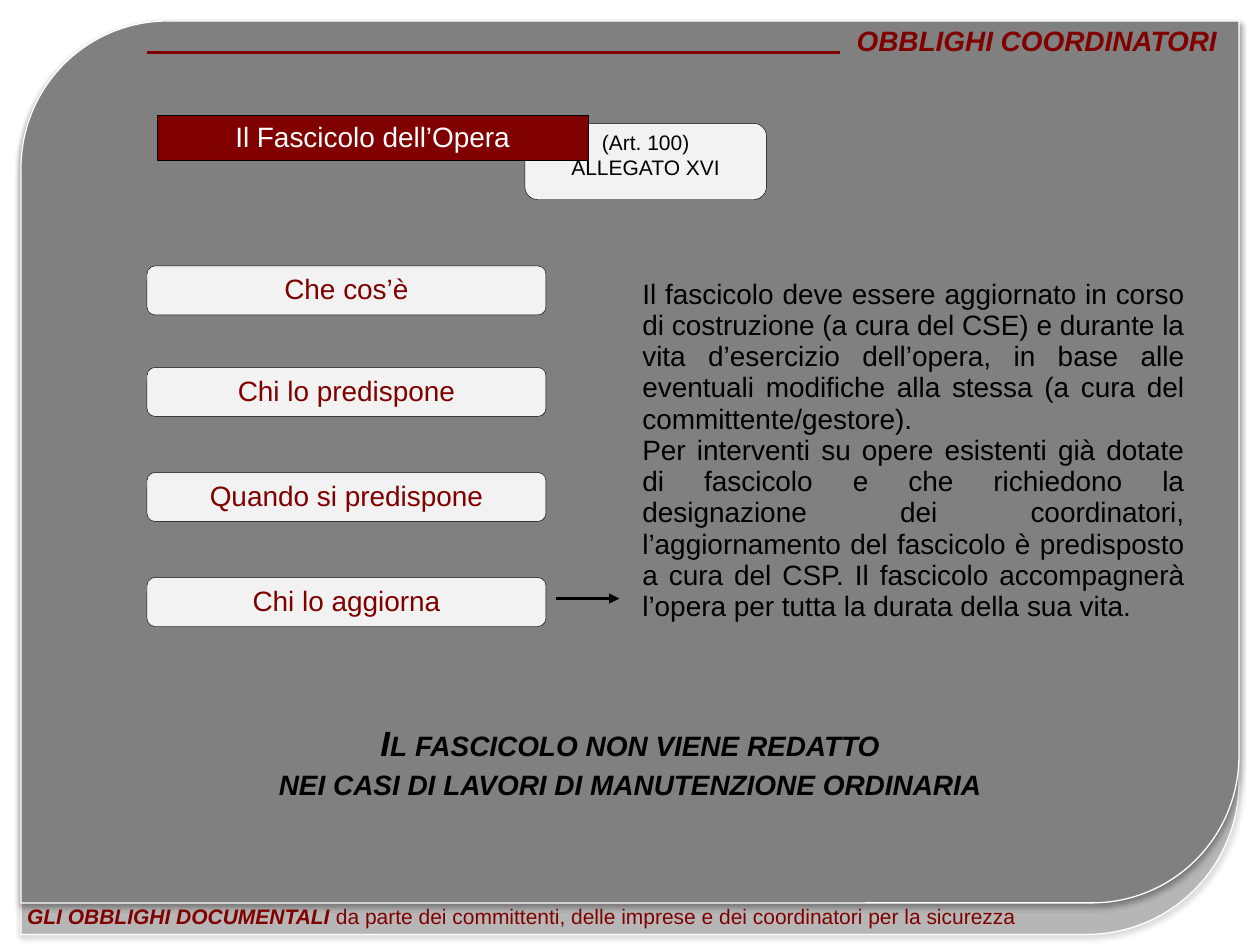
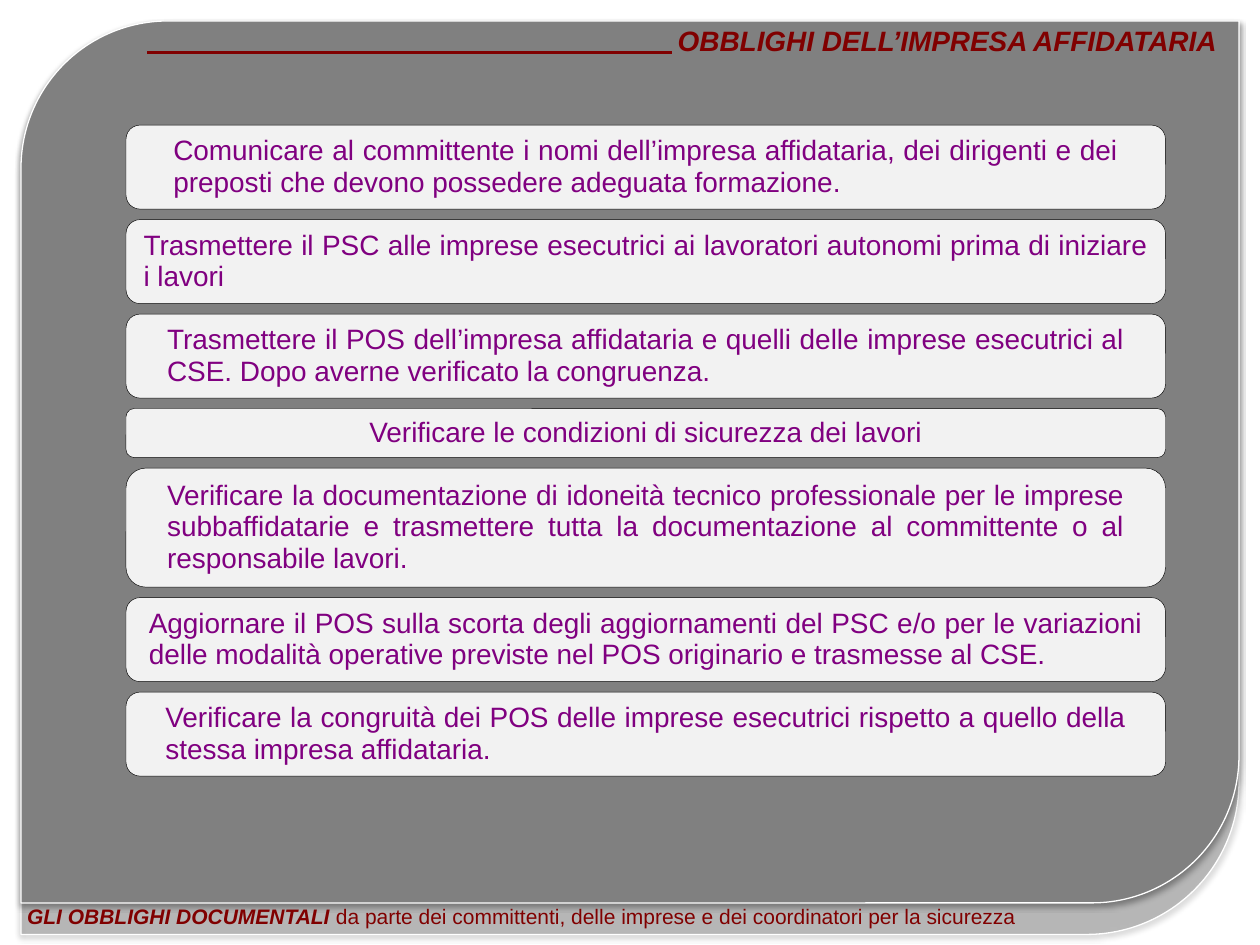
from lxml.etree import SubElement
from pptx import Presentation
from pptx.dml.color import RGBColor
from pptx.enum.shapes import MSO_CONNECTOR as Connector, MSO_SHAPE as Preset
from pptx.enum.text import MSO_ANCHOR as Anchor, MSO_AUTO_SIZE as AutoSize, PP_ALIGN as Align
from pptx.oxml.ns import qn
from pptx.util import Pt

MAROON = RGBColor(0x80, 0x00, 0x00)
PURPLE = RGBColor(0x80, 0x00, 0x80)
GREY = RGBColor(0x80, 0x80, 0x80)
PALE = RGBColor(0xF2, 0xF2, 0xF2)
BLACK = RGBColor(0x00, 0x00, 0x00)
WHITE = RGBColor(0xFF, 0xFF, 0xFF)


def add_box(slide, preset, place, fill, line, line_width):
    shape = slide.shapes.add_shape(preset, *map(Pt, place))
    shape.shadow.inherit = False
    shape.fill.solid()
    shape.fill.fore_color.rgb = fill
    shape.line.color.rgb = line
    shape.line.width = Pt(line_width)
    return shape


def write_text(shape, paragraphs, size, color, alignment, anchor=Anchor.MIDDLE, strong=False, insets=(7.2, 3.6)):
    side, edge = map(Pt, insets)
    frame_format = {"word_wrap": True, "auto_size": AutoSize.NONE, "vertical_anchor": anchor,
                    "margin_left": side, "margin_right": side, "margin_top": edge, "margin_bottom": edge}
    for name, value in frame_format.items():
        setattr(shape.text_frame, name, value)
    shape.text_frame.text = "\n".join(paragraphs)
    font_format = {"name": "Arial", "size": Pt(size), "bold": strong, "italic": strong}
    for paragraph in shape.text_frame.paragraphs:
        paragraph.alignment = alignment
        paragraph.line_spacing = 0.93
        for run in paragraph.runs:
            run.font.color.rgb = color
            for name, value in font_format.items():
                setattr(run.font, name, value)


presentation = Presentation()
presentation.slide_width = Pt(720)
presentation.slide_height = Pt(540)

slides = []
for title_text, title_left, rule_end in [
    ("OBBLIGHI COORDINATORI", 440, 480),
    ("OBBLIGHI DELL’IMPRESA AFFIDATARIA", 362, 384),
]:
    slide = presentation.slides.add_slide(presentation.slide_layouts[5])
    slides.append(slide)

    for height, opacity in [(522, 40), (504, 100)]:
        panel = add_box(slide, Preset.ROUND_2_DIAG_RECTANGLE, (12, 12, 696, height), GREY, WHITE, 0.75)
        properties = panel.element.spPr
        fill_color = properties.find(qn("a:solidFill"))[0]
        SubElement(fill_color, qn("a:alpha"), val=str(opacity * 1000))
        shadow = SubElement(properties.find(qn("a:effectLst")), qn("a:outerShdw"),
                            blurRad=str(Pt(3.1)), dist=str(Pt(1.8)), dir="5400000", rotWithShape="0")
        shadow_color = SubElement(shadow, qn("a:srgbClr"), val=str(BLACK))
        SubElement(shadow_color, qn("a:alpha"), val="35000")

    footer = slide.shapes.add_textbox(Pt(9), Pt(514), Pt(624), Pt(20))
    write_text(footer, ["GLI OBBLIGHI DOCUMENTALI "], 12, MAROON, Align.LEFT, strong=True, insets=(6.5, 3))
    footer_run = footer.text_frame.paragraphs[0].add_run()
    footer_run.text = "da parte dei committenti, delle imprese e dei coordinatori per la sicurezza"
    footer_run.font.color.rgb = MAROON
    for name, value in {"name": "Arial", "size": Pt(12), "bold": False, "italic": False}.items():
        setattr(footer_run.font, name, value)

    title = slide.shapes.title
    for name, value in {"left": title_left, "top": 12, "width": 702 - title_left, "height": 24.5}.items():
        setattr(title, name, Pt(value))
    write_text(title, [title_text], 16, MAROON, Align.RIGHT, strong=True, insets=(6.5, 3))
    title.element.getparent().append(title.element)

    rule = slide.shapes.add_connector(Connector.STRAIGHT, Pt(rule_end), Pt(30), Pt(84), Pt(30))
    rule.line.color.rgb = MAROON
    rule.line.width = Pt(2)
    SubElement(rule.element.spPr, qn("a:effectLst"))

coordinators_slide, contractor_slide = slides

article = add_box(coordinators_slide, Preset.ROUNDED_RECTANGLE, (300, 70.5, 138, 43.5), PALE, BLACK, 0.25)
write_text(article, ["(Art. 100)", "ALLEGATO XVI"], 12, BLACK, Align.CENTER, Anchor.TOP, insets=(7.2, 2.5))
article.text_frame.paragraphs[1].space_before = Pt(1)

heading = add_box(coordinators_slide, Preset.RECTANGLE, (90, 66, 246, 25.5), MAROON, BLACK, 0.25)
write_text(heading, ["Il Fascicolo dell’Opera"], 16, WHITE, Align.CENTER)

for question, top in [
    ("Che cos’è", 152),
    ("Chi lo predispone", 210),
    ("Quando si predispone", 270),
    ("Chi lo aggiorna", 330),
]:
    question_box = add_box(coordinators_slide, Preset.ROUNDED_RECTANGLE, (84, top, 228, 28), PALE, BLACK, 0.25)
    write_text(question_box, [question], 16, MAROON, Align.CENTER)

arrow = coordinators_slide.shapes.add_connector(Connector.STRAIGHT, Pt(318), Pt(342), Pt(354), Pt(342))
arrow.line.color.rgb = BLACK
arrow.line.width = Pt(1.5)
SubElement(arrow.line._get_or_add_ln(), qn("a:tailEnd"), type="triangle")
SubElement(arrow.element.spPr, qn("a:effectLst"))

answer = coordinators_slide.shapes.add_textbox(Pt(360), Pt(156), Pt(324), Pt(206))
write_text(answer, [
    "Il fascicolo deve essere aggiornato in corso di costruzione (a cura del CSE) e durante la vita "
    "d’esercizio dell’opera, in base alle eventuali modifiche alla stessa (a cura del committente/gestore).",
    "Per interventi su opere esistenti già dotate di fascicolo e che richiedono la designazione dei "
    "coordinatori, l’aggiornamento del fascicolo è predisposto a cura del CSP. Il fascicolo accompagnerà "
    "l’opera per tutta la durata della sua vita.",
], 16, BLACK, Align.JUSTIFY, Anchor.TOP)

exception = coordinators_slide.shapes.add_textbox(Pt(108), Pt(408), Pt(504), Pt(58))
write_text(exception, [
    "Il fascicolo non viene redatto",
    "nei casi di lavori di manutenzione ordinaria",
], 20, BLACK, Align.CENTER, strong=True)
for paragraph in exception.text_frame.paragraphs:
    paragraph.runs[0]._r.get_or_add_rPr().set("cap", "small")

duty_top = 71.5
for duty, height, side_inset, alignment in [
    ("Comunicare al committente i nomi dell’impresa affidataria, dei dirigenti e dei preposti che devono "
     "possedere adeguata formazione.", 48, 27, Align.JUSTIFY),
    ("Trasmettere il PSC alle imprese esecutrici ai lavoratori autonomi prima di iniziare i lavori",
     48, 10, Align.JUSTIFY),
    ("Trasmettere il POS dell’impresa affidataria e quelli delle imprese esecutrici al CSE. Dopo averne "
     "verificato la congruenza.", 48, 23.5, Align.JUSTIFY),
    ("Verificare le condizioni di sicurezza dei lavori", 28, 7.2, Align.CENTER),
    ("Verificare la documentazione di idoneità tecnico professionale per le imprese subbaffidatarie e "
     "trasmettere tutta la documentazione al committente o al responsabile lavori.", 68, 23.5, Align.JUSTIFY),
    ("Aggiornare il POS sulla scorta degli aggiornamenti del PSC e/o per le variazioni delle modalità "
     "operative previste nel POS originario e trasmesse al CSE.", 48, 13, Align.JUSTIFY),
    ("Verificare la congruità dei POS delle imprese esecutrici rispetto a quello della stessa impresa "
     "affidataria.", 48, 22.5, Align.JUSTIFY),
]:
    duty_box = add_box(contractor_slide, Preset.ROUNDED_RECTANGLE, (72, duty_top, 594, height), PALE, BLACK, 0.25)
    # inset of a rounded box is measured from its inner text rectangle
    corner = 0.1667 * height * 0.29
    write_text(duty_box, [duty], 16, PURPLE, alignment, insets=(max(side_inset - corner, 7.2), 3.6))
    duty_top += height + 6

presentation.save("out.pptx")
